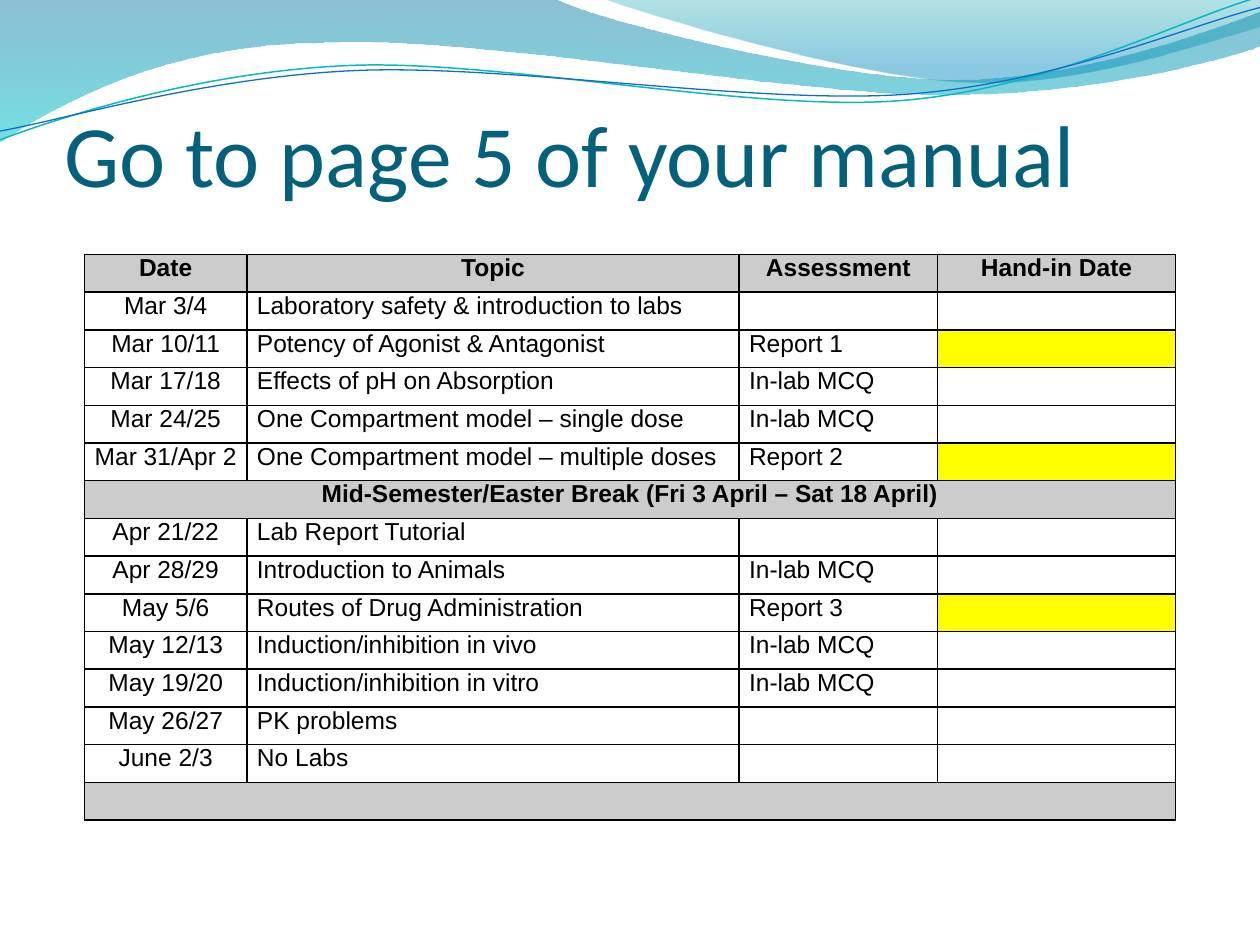
"""Build the lab timetable slide with its wave header."""
from math import cos, radians, sin
from lxml.etree import SubElement
from pptx import Presentation
from pptx.dml.color import RGBColor
from pptx.enum.text import MSO_ANCHOR as Anchor, MSO_AUTO_SIZE as AutoSize, PP_ALIGN as Align
from pptx.oxml.ns import qn
from pptx.util import Cm, Pt

TITLE = "Go to page 5 of your manual"
HEADER = ("Date", "Topic", "Assessment", "Hand-in Date")
BEFORE_BREAK = [
    ("Mar 3/4", "Laboratory safety & introduction to labs", ""),
    ("Mar 10/11", "Potency of Agonist & Antagonist", "Report 1"),
    ("Mar 17/18", "Effects of pH on Absorption", "In-lab MCQ"),
    ("Mar 24/25", "One Compartment model – single dose", "In-lab MCQ"),
    ("Mar 31/Apr 2", "One Compartment model – multiple doses", "Report 2"),
]
BREAK = ("Mid-Semester/Easter Break (Fri 3 April – Sat 18 April)",)
AFTER_BREAK = [
    ("Apr 21/22", "Lab Report Tutorial", ""),
    ("Apr 28/29", "Introduction to Animals", "In-lab MCQ"),
    ("May 5/6", "Routes of Drug Administration", "Report 3"),
    ("May 12/13", "Induction/inhibition in vivo", "In-lab MCQ"),
    ("May 19/20", "Induction/inhibition in vitro", "In-lab MCQ"),
    ("May 26/27", "PK problems", ""),
    ("June 2/3", "No Labs", ""),
]
ROWS = [HEADER, *BEFORE_BREAK, BREAK, *AFTER_BREAK, ("",)]
COLUMN_WIDTHS = (3.28, 9.92, 4, 4.8)
ROW_HEIGHT = 0.76

THEME = {
    "title": {"name": "Calibri", "size": Pt(50), "color": "04617B"},
    "body": {"name": "Arial", "size": Pt(14), "color": "000000", "bold": False},
    "strong": {"name": "Arial", "size": Pt(14), "color": "000000", "bold": True},
    "band": "CCCCCC", "due": "FFFF00", "border": "000000",
    "upper_wave": [(0, "0074A1", 45), (1, "00C6CF", 55)],
    "right_wave": [(0, "00A1A9", 30), (0.8, "008BBF", 45)],
    "teal_line": {"color": "0AB8BF", "width": Pt(0.85)},
    "blue_line": {"color": "0F6FC6", "width": Pt(0.75)},
}

UNIT = 2.54
TILT = -2.7
FILLED_WAVES = [
    ("upper_wave", [(0, -0.01), (4.4, -0.01), (4.76, 0.17, 6.64, 0.63, 7.58, 0.63),
                    (8.53, 0.63, 9.58, 0.26, 10, 0.09), (10.01, 0.36),
                    (9.83, 0.44, 8.7, 0.76, 7.46, 0.75), (6.22, 0.75, 3.82, 0.28, 2.57, 0.34),
                    (1.29, 0.35, 0.46, 0.83, -0.01, 1.13)]),
    ("right_wave", [(4.79, -0.01), (5.09, 0.11, 6.82, 0.62, 7.69, 0.65),
                    (8.56, 0.69, 9.61, 0.32, 10, 0.21), (10, 0)]),
]
LINE_WAVES = [
    ("teal_line", (4.99, 0.58), [(0, 1.11), (0.48, 0.93, 1.58, 0.57, 2.77, 0.52),
                                 (3.95, 0.47, 5.93, 0.89, 7.13, 0.8),
                                 (8.33, 0.71, 9.38, 0.15, 9.98, -0.02)]),
    ("blue_line", (5, 0.59), [(0, 1.04), (0.47, 0.96, 1.64, 0.61, 2.83, 0.56),
                              (4.03, 0.51, 5.97, 0.83, 7.17, 0.75),
                              (8.36, 0.67, 9.41, 0.21, 10, 0.06)]),
]


def set_attributes(target, values):
    for name, value in values.items():
        if name == "color":
            target.color.rgb = RGBColor.from_string(value)
        else:
            setattr(target, name, value)


def level(point, center):
    angle = radians(-TILT)
    across, down = point[0] - center[0], point[1] - center[1]
    return (center[0] + across * cos(angle) - down * sin(angle),
            center[1] + across * sin(angle) + down * cos(angle))


def add_curve(slide, outline, closed, center=None):
    segments = [list(zip(segment[::2], segment[1::2])) for segment in outline]
    if center:
        segments = [[level(point, center) for point in segment] for segment in segments]
    segments = [[(Cm(x * UNIT), Cm(y * UNIT)) for x, y in segment] for segment in segments]
    anchors = [segment[-1] for segment in segments]
    builder = slide.shapes.build_freeform(*anchors[0], scale=1.0)
    builder.add_line_segments(anchors[1:], close=closed)
    shape = builder.convert_to_shape()
    shape.shadow.inherit = False
    geometry = next(shape._element.spPr.iter(qn("a:path")))
    for element, segment in zip(list(geometry)[1:], segments[1:]):
        if len(segment) == 3:
            curve = element.makeelement(qn("a:cubicBezTo"))
            for x, y in segment:
                SubElement(curve, qn("a:pt"), x=str(x - shape.left), y=str(y - shape.top))
            geometry.replace(element, curve)
    return shape


def add_waves(slide):
    for style, outline in FILLED_WAVES:
        shape = add_curve(slide, outline, True)
        shape.line.fill.background()
        shape.fill.gradient()
        shape.fill.gradient_angle = 270
        for stop, (position, color, _) in zip(shape.fill.gradient_stops, THEME[style]):
            set_attributes(stop, {"position": position, "color": color})
        colors = list(shape._element.spPr.iter(qn("a:srgbClr")))
        for element, (_, _, opacity) in zip(colors, THEME[style]):
            SubElement(element, qn("a:alpha"), val=str(opacity * 1000))
    for style, center, outline in LINE_WAVES:
        shape = add_curve(slide, outline, False, center)
        shape.rotation = TILT
        shape.fill.background()
        set_attributes(shape.line, THEME[style])


def add_title(slide):
    title = slide.shapes.title
    set_attributes(title, {"left": Cm(1.3), "top": Cm(2.17), "width": Cm(22.86), "height": Cm(1.96)})
    set_attributes(title.text_frame, {
        "text": TITLE, "word_wrap": True, "auto_size": AutoSize.NONE,
        "vertical_anchor": Anchor.BOTTOM, "margin_left": 0, "margin_right": 0,
        "margin_top": Cm(0.13), "margin_bottom": 0})
    paragraph = title.text_frame.paragraphs[0]
    paragraph.alignment = Align.LEFT
    set_attributes(paragraph.runs[0].font, THEME["title"])


def format_cell(cell, text, fill, strong, centered):
    set_attributes(cell, {"margin_left": Cm(0.2), "margin_right": Cm(0.2), "margin_top": 0,
                          "margin_bottom": 0, "vertical_anchor": Anchor.TOP})
    paragraph = cell.text_frame.paragraphs[0]
    if text:
        paragraph.alignment = Align.CENTER if centered else Align.LEFT
        run = paragraph.add_run()
        run.text = text
        set_attributes(run.font, THEME["strong" if strong else "body"])
    else:
        SubElement(paragraph._p, qn("a:endParaRPr"), sz=str(int(THEME["body"]["size"].pt * 100)))
    properties = cell._tc.get_or_add_tcPr()
    for side in ("lnL", "lnR", "lnT", "lnB"):
        line = SubElement(properties, qn(f"a:{side}"), w=str(Pt(1)))
        SubElement(SubElement(line, qn("a:solidFill")), qn("a:srgbClr"), val=THEME["border"])
    if fill:
        cell.fill.solid()
        cell.fill.fore_color.rgb = RGBColor.from_string(fill)
    else:
        cell.fill.background()


def add_timetable(slide):
    count = len(COLUMN_WIDTHS)
    table = slide.shapes.add_table(len(ROWS), count, Cm(1.7), Cm(5.13), Cm(sum(COLUMN_WIDTHS)),
                                   Cm(ROW_HEIGHT * len(ROWS))).table
    set_attributes(table, {"first_row": False, "horz_banding": False})
    for column, width in zip(table.columns, COLUMN_WIDTHS):
        column.width = Cm(width)
    for index, values in enumerate(ROWS):
        table.rows[index].height = Cm(ROW_HEIGHT)
        spanning = len(values) == 1
        strong = spanning or values is HEADER
        texts = values + ("",) * (count - len(values))
        for position, text in enumerate(texts):
            due = position == count - 1 and texts[2].startswith("Report")
            fill = THEME["band"] if strong else THEME["due"] if due else None
            format_cell(table.cell(index, position), text, fill, strong, strong or position == 0)
        if spanning:
            table.cell(index, 0).merge(table.cell(index, count - 1))


def main():
    presentation = Presentation()
    set_attributes(presentation, {"slide_width": Cm(25.4), "slide_height": Cm(19.05)})
    slide = presentation.slides.add_slide(presentation.slide_layouts[5])
    add_waves(slide)
    add_title(slide)
    add_timetable(slide)
    presentation.save("out.pptx")


if __name__ == "__main__":
    main()
